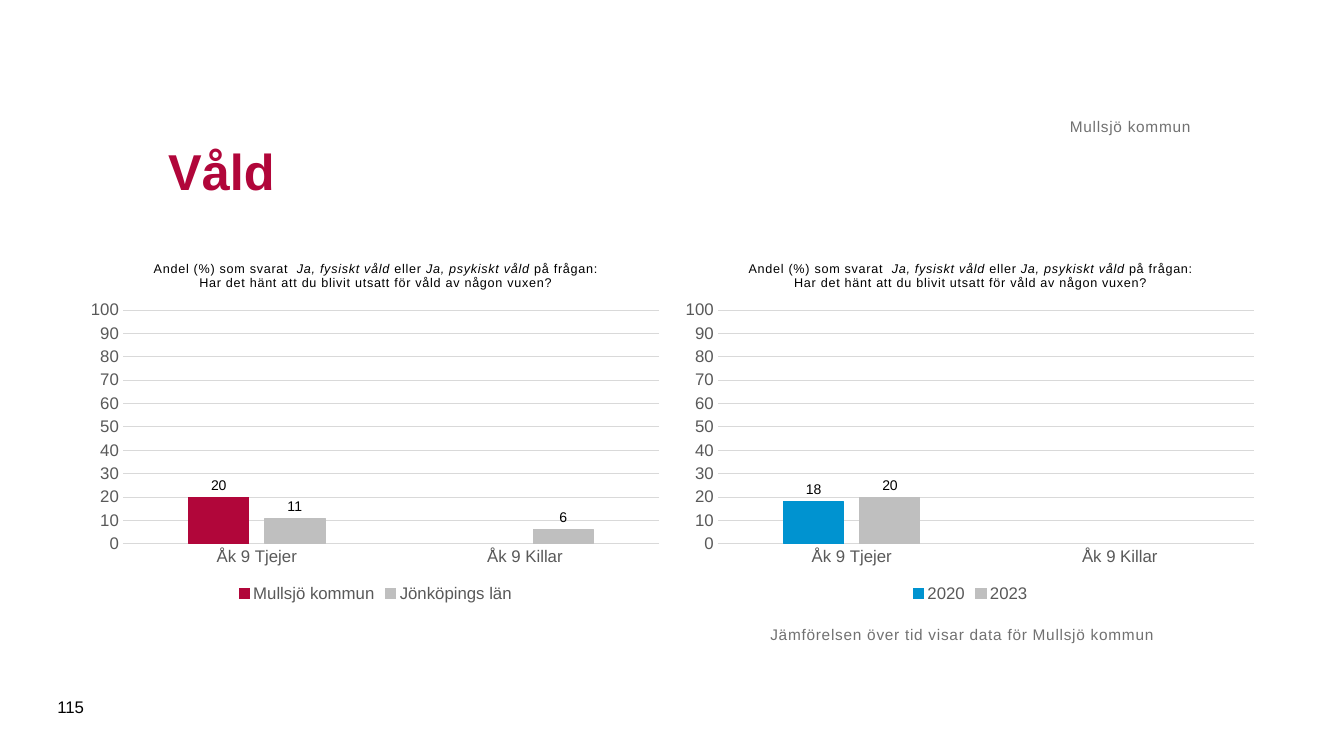
from lxml import etree
from pptx import Presentation
from pptx.chart.data import CategoryChartData
from pptx.dml.color import RGBColor
from pptx.enum.chart import XL_CHART_TYPE, XL_LABEL_POSITION, XL_LEGEND_POSITION, XL_TICK_MARK
from pptx.enum.text import MSO_ANCHOR, PP_ALIGN
from pptx.oxml.ns import qn
from pptx.util import Inches, Pt

FONT = "Arial"
COLORS = {"red": "B1063A", "blue": "0093D0", "bar": "BFBFBF", "axis": "595959",
          "grid": "D9D9D9", "muted": "717171", "black": "000000"}
NUMBER_FORMAT = "#,##0;#,##0"
CATEGORIES = ["Åk 9 Tjejer", "Åk 9 Killar"]
# Lines of (text, italic) runs
QUESTION = [
    [("Andel (%) som svarat  ", False), ("Ja, fysiskt våld", True), (" eller ", False),
     ("Ja, psykiskt våld", True), (" på frågan:", False)],
    [("Har det hänt att du blivit utsatt för våld av någon vuxen?", False)],
]
# Series of (name, values, colour)
CHARTS = [
    [("Mullsjö kommun", (20, None), "red"), ("Jönköpings län", (11, 6), "bar")],
    [("2020", (18, None), "blue"), ("2023", (20, None), "bar")],
]
CHART_LEFT, CHART_TOP, CHART_W, CHART_H, CHART_STEP = 0.79, 2.4, 5.87, 3.62, 5.9
TITLE_LAYOUT = {"xMode": "edge", "yMode": "edge", "x": 0.12, "y": 0.04}
PLOT_LAYOUT = {"layoutTarget": "inner", "xMode": "edge", "yMode": "edge",
               "x": 0.073, "y": 0.187, "w": 0.906, "h": 0.641}
MIDDLE, TOP, BOTTOM = MSO_ANCHOR.MIDDLE, MSO_ANCHOR.TOP, MSO_ANCHOR.BOTTOM
# text, box, size, colour, bold, spacing, anchor, alignment, has default insets
TEXTS = [
    ("Våld", (1.57, 0.98, 10.24, 1.42), 36, "red", True, 0, MIDDLE, PP_ALIGN.LEFT, True),
    ("Jämförelsen över tid visar data för Mullsjö kommun", (7.64, 6.2, 5.31, 0.94),
     11, "muted", False, 0.5, TOP, PP_ALIGN.LEFT, False),
    ("Mullsjö kommun", (1.57, 0.62, 10.24, 0.73),
     11, "muted", False, 0.5, BOTTOM, PP_ALIGN.RIGHT, False),
    ("115", (0.47, 6.81, 0.57, 0.4), 12, "black", False, 0, MIDDLE, PP_ALIGN.LEFT, True),
]


def rgb(name):
    return RGBColor.from_string(COLORS[name])


def style_font(font, size, color):
    font.name = FONT
    font.size = Pt(size)
    font.color.rgb = rgb(color)


def style_line(line, color):
    line.color.rgb = rgb(color)
    line.width = Pt(0.75)


def add_run(p, text, size, color, bold=False, italic=False, spacing=0.0):
    r = p.add_run()
    r.text = text
    style_font(r.font, size, color)
    r.font.bold = bold
    r.font.italic = italic
    if spacing:
        r._r.get_or_add_rPr().set("spc", str(int(spacing * 100)))


def set_layout(parent, index, values):
    """Give a chart part a manual layout, placed at a child index."""
    for old in parent.findall(qn("c:layout")):
        parent.remove(old)
    layout = etree.Element(qn("c:layout"))
    manual = etree.SubElement(layout, qn("c:manualLayout"))
    for tag, value in values.items():
        etree.SubElement(manual, qn(f"c:{tag}")).set("val", str(value))
    parent.insert(index, layout)


def add_question(chart):
    chart.has_title = True
    tf = chart.chart_title.text_frame
    for i, line in enumerate(QUESTION):
        p = tf.paragraphs[0] if i == 0 else tf.add_paragraph()
        p.alignment = PP_ALIGN.CENTER
        for text, italic in line:
            add_run(p, text, 9, "black", italic=italic, spacing=0.5)
    set_layout(chart.chart_title._element, 1, TITLE_LAYOUT)


def style_axes(chart):
    for axis in (chart.category_axis, chart.value_axis):
        axis.major_tick_mark = axis.minor_tick_mark = XL_TICK_MARK.NONE
        style_font(axis.tick_labels.font, 12, "axis")
    style_line(chart.category_axis.format.line, "grid")
    values = chart.value_axis
    values.minimum_scale, values.maximum_scale, values.major_unit = 0, 100, 10
    values.format.line.fill.background()
    style_line(values.major_gridlines.format.line, "grid")
    values.tick_labels.number_format = NUMBER_FORMAT
    values.tick_labels.number_format_is_linked = False


def style_series(series, color):
    series.format.fill.solid()
    series.format.fill.fore_color.rgb = rgb(color)
    style_line(series.format.line, color)
    labels = series.data_labels
    labels.show_value = True
    labels.position = XL_LABEL_POSITION.OUTSIDE_END
    labels.number_format = NUMBER_FORMAT
    labels.number_format_is_linked = False
    style_font(labels.font, 10, "black")


def add_bar_chart(s, left, series_list):
    data = CategoryChartData()
    data.categories = CATEGORIES
    for name, values, _ in series_list:
        data.add_series(name, values)
    chart = s.shapes.add_chart(XL_CHART_TYPE.COLUMN_CLUSTERED, Inches(left), Inches(CHART_TOP),
                               Inches(CHART_W), Inches(CHART_H), data).chart
    style_font(chart.font, 10, "black")
    add_question(chart)
    style_axes(chart)
    chart.has_legend = True
    chart.legend.position = XL_LEGEND_POSITION.BOTTOM
    chart.legend.include_in_layout = False
    style_font(chart.legend.font, 12, "axis")
    plot = chart.plots[0]
    plot.gap_width, plot.overlap, plot.vary_by_categories = 219, -27, False
    for series, (_, _, color) in zip(plot.series, series_list):
        style_series(series, color)
    set_layout(chart._chartSpace.chart.plotArea, 0, PLOT_LAYOUT)


def add_text(s, text, box, size, color, bold, spacing, anchor, align, insets):
    tf = s.shapes.add_textbox(*map(Inches, box)).text_frame
    tf.word_wrap = True
    tf.vertical_anchor = anchor
    if not insets:
        tf.margin_left = tf.margin_top = tf.margin_right = tf.margin_bottom = 0
    p = tf.paragraphs[0]
    p.alignment = align
    add_run(p, text, size, color, bold=bold, spacing=spacing)


def main():
    prs = Presentation()
    prs.slide_width, prs.slide_height = Inches(13.33), Inches(7.5)
    s = prs.slides.add_slide(prs.slide_layouts[6])
    for i, series_list in enumerate(CHARTS):
        add_bar_chart(s, CHART_LEFT + i * CHART_STEP, series_list)
    for text in TEXTS:
        add_text(s, *text)
    prs.save("out.pptx")


if __name__ == "__main__":
    main()
